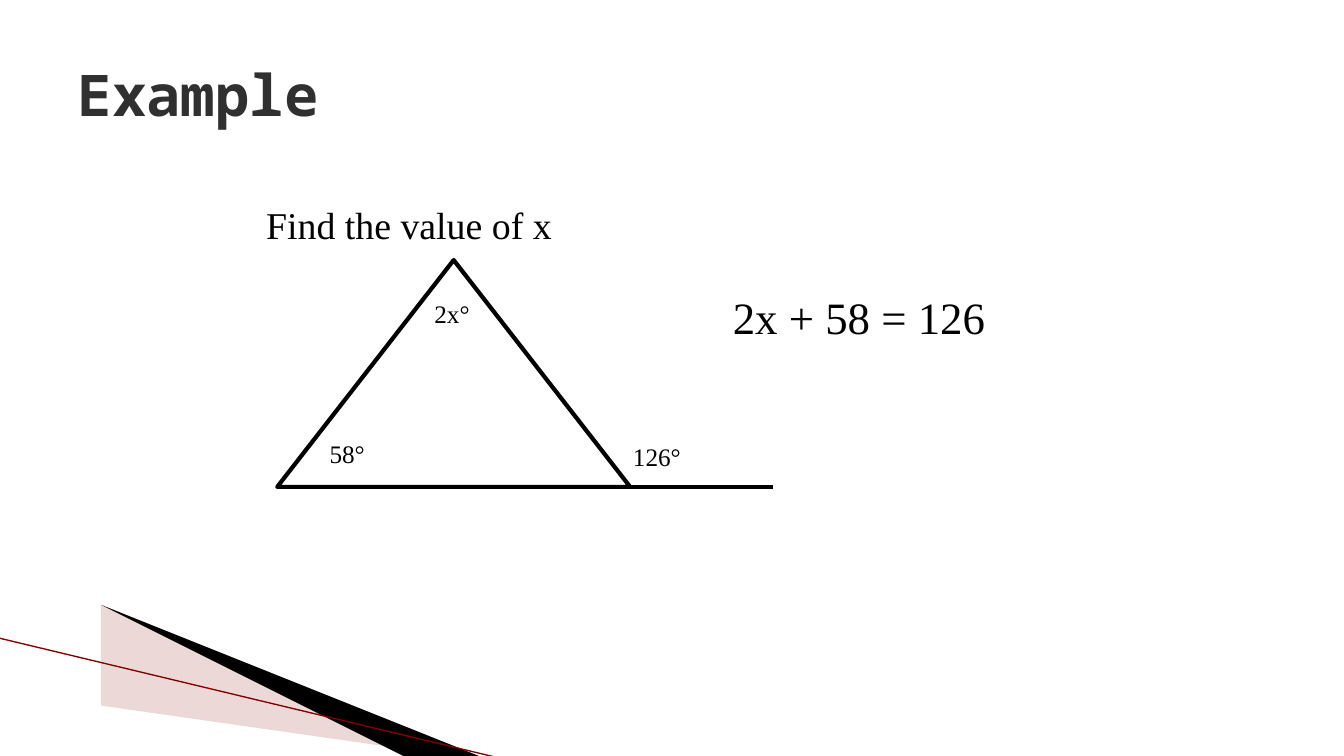
from dataclasses import dataclass

import pptx
import pptx.dml.color
import pptx.enum.shapes
import pptx.enum.text
import pptx.oxml
import pptx.oxml.ns
import pptx.presentation
import pptx.shapes.autoshape
import pptx.slide
import pptx.text.text
import pptx.util
from lxml import etree

Inches = pptx.util.Inches
BLACK = "000000"
SERIF = "Times New Roman"


@dataclass
class Wedge:
    points: list[tuple[float, float]]
    colour: str
    opacity: int = 100


@dataclass
class Line:
    start: tuple[float, float]
    end: tuple[float, float]
    colour: str
    width: float


@dataclass
class Label:
    text: str
    left: float
    top: float
    width: float
    height: float = 0.4
    size: int = 18
    wrap: bool = True


WEDGES = [
    Wedge([(0.73, 6.51), (7.93, 7.51), (6.08, 7.51), (0.73, 6.5)], "D29E9E", 40),
    Wedge([(0.71, 6.49), (6.09, 7.51), (4.96, 7.52), (0.72, 6.5)], BLACK),
]
EDGE_LINE = Line((-0.01, 6.33), (4.95, 7.52), "800000", 0.95)
BASE_EXTENSION = Line((5.92, 4.83), (7.67, 4.83), BLACK, 3)
LABELS = [
    Label("58°", 3.17, 4.3, 0.56, wrap=False),
    Label("2x°", 4.21, 2.91, 0.92),
    Label("126°", 6.18, 4.33, 1.33),
    Label("2x + 58 = 126", 7.17, 2.83, 3.67, 0.64, 32),
]


def colour(value: str) -> pptx.dml.color.RGBColor:
    return pptx.dml.color.RGBColor.from_string(value)


def place(shape, left: float, top: float, width: float, height: float) -> None:
    shape.left, shape.top = Inches(left), Inches(top)
    shape.width, shape.height = Inches(width), Inches(height)


def style(para: pptx.text.text._Paragraph, size: int, name: str = SERIF,
          ink: str = BLACK, bold: bool = False) -> None:
    para.alignment = pptx.enum.text.PP_ALIGN.LEFT
    para.font.size = pptx.util.Pt(size)
    para.font.name = name
    para.font.bold = bold
    para.font.color.rgb = colour(ink)


def draw_wedge(page: pptx.slide.Slide, wedge: Wedge) -> None:
    builder = page.shapes.build_freeform(*wedge.points[0], scale=Inches(1))
    builder.add_line_segments(wedge.points[1:], close=True)
    shape = builder.convert_to_shape()
    shape.shadow.inherit = False
    shape.fill.solid()
    shape.fill.fore_color.rgb = colour(wedge.colour)
    shape.line.fill.background()
    if wedge.opacity < 100:
        fill = shape.fill._xPr.find(pptx.oxml.ns.qn("a:solidFill"))
        alpha = etree.SubElement(fill[0], pptx.oxml.ns.qn("a:alpha"))
        alpha.set("val", str(wedge.opacity * 1000))


def draw_line(page: pptx.slide.Slide, line: Line) -> None:
    connector = page.shapes.add_connector(
        pptx.enum.shapes.MSO_CONNECTOR.STRAIGHT,
        *map(Inches, line.start), *map(Inches, line.end))
    connector.line.color.rgb = colour(line.colour)
    connector.line.width = pptx.util.Pt(line.width)
    etree.SubElement(connector._element.spPr, pptx.oxml.ns.qn("a:effectLst"))


def draw_label(page: pptx.slide.Slide, label: Label) -> None:
    box = page.shapes.add_textbox(0, 0, 0, 0)
    place(box, label.left, label.top, label.width, label.height)
    frame = box.text_frame
    frame.word_wrap = label.wrap
    frame.auto_size = pptx.enum.text.MSO_AUTO_SIZE.SHAPE_TO_FIT_TEXT
    frame.text = label.text
    style(frame.paragraphs[0], label.size)


def fill_placeholders(page: pptx.slide.Slide) -> None:
    title, body = page.shapes.title, page.placeholders[1]
    place(title, 0.67, 0.3, 12, 1.25)
    title.text_frame.text = "Example"
    title.text_frame.vertical_anchor = pptx.enum.text.MSO_ANCHOR.MIDDLE
    style(title.text_frame.paragraphs[0], 41, "Noto Sans Mono", "303030", True)

    place(body, 2.42, 1.91, 5.17, 0.75)
    frame = body.text_frame
    frame.text = "Find the value of x"
    frame.margin_top = Inches(0.09)
    frame.auto_size = pptx.enum.text.MSO_AUTO_SIZE.NONE
    para = frame.paragraphs[0]
    properties = para._p.get_or_add_pPr()
    properties.set("marL", str(Inches(0.4)))
    properties.set("indent", str(Inches(-0.28)))
    etree.SubElement(properties, pptx.oxml.ns.qn("a:buNone"))
    para.space_before = pptx.util.Pt(0)
    style(para, 27)


def draw_triangle(page: pptx.slide.Slide) -> None:
    triangle = page.shapes.add_shape(
        pptx.enum.shapes.MSO_SHAPE.ISOSCELES_TRIANGLE, 0, 0, 0, 0)
    place(triangle, 2.75, 2.58, 3.5, 2.25)
    triangle.shadow.inherit = False
    triangle.fill.background()
    triangle.line.color.rgb = colour(BLACK)
    triangle.line.width = pptx.util.Pt(3)


def main() -> None:
    deck = pptx.Presentation()
    deck.slide_width, deck.slide_height = Inches(13.33), Inches(7.5)
    page = deck.slides.add_slide(deck.slide_layouts[1])
    page.background.fill.solid()
    page.background.fill.fore_color.rgb = colour("FFFFFF")

    # Corner decoration
    for wedge in WEDGES:
        draw_wedge(page, wedge)
    draw_line(page, EDGE_LINE)

    # Title and question
    fill_placeholders(page)

    # Triangle, its extended base, angles and equation
    draw_triangle(page)
    draw_line(page, BASE_EXTENSION)
    for label in LABELS:
        draw_label(page, label)

    deck.save("out.pptx")


if __name__ == "__main__":
    main()
